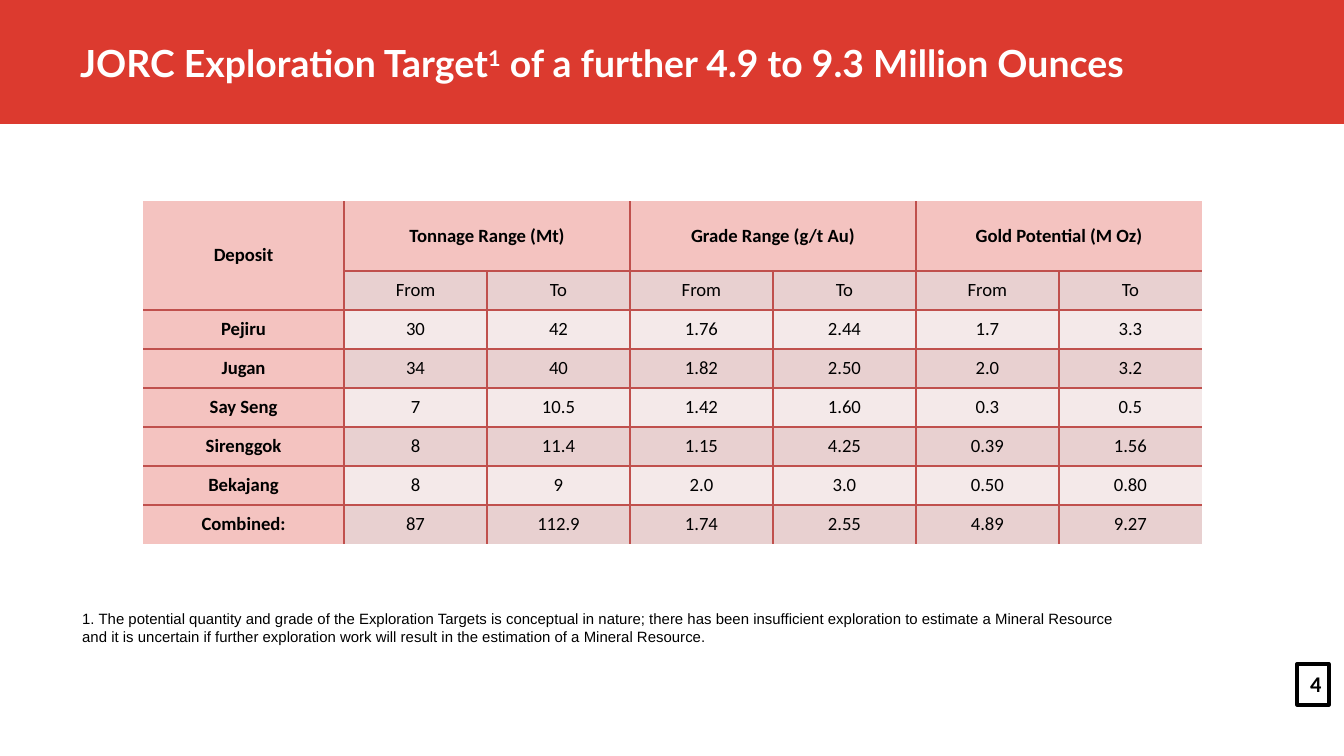
from dataclasses import dataclass

import pptx
import pptx.dml.color
import pptx.enum.shapes
import pptx.enum.text
import pptx.oxml
import pptx.oxml.ns
import pptx.util
from lxml import etree

EMU_PER_PX = 914400 / 134.4
MIDDLE = pptx.enum.text.MSO_ANCHOR.MIDDLE
CENTER = pptx.enum.text.PP_ALIGN.CENTER


@dataclass(frozen=True)
class Theme:
    red: str = "DC3A2F"
    border: str = "C0504D"
    dark_band: str = "E8D0D0"
    light_band: str = "F4E9E9"
    black: str = "000000"
    white: str = "FFFFFF"
    heading_font: str = "Lato"
    table_font: str = "Calibri"
    note_font: str = "Arial"
    heading_size: int = 20
    table_size: int = 10
    note_size: int = 8
    page_size: int = 12


THEME = Theme()

HEADERS = ["Tonnage Range (Mt)", "Grade Range (g/t Au)", "Gold Potential (M Oz)"]
DEPOSITS = [
    ["Pejiru", "30", "42", "1.76", "2.44", "1.7", "3.3"],
    ["Jugan", "34", "40", "1.82", "2.50", "2.0", "3.2"],
    ["Say Seng", "7", "10.5", "1.42", "1.60", "0.3", "0.5"],
    ["Sirenggok", "8", "11.4", "1.15", "4.25", "0.39", "1.56"],
    ["Bekajang", "8", "9", "2.0", "3.0", "0.50", "0.80"],
    ["Combined:", "87", "112.9", "1.74", "2.55", "4.89", "9.27"],
]
FOOTNOTE = (
    "1. The potential quantity and grade of the Exploration Targets is conceptual in nature; "
    "there has been insufficient exploration to estimate a Mineral Resource and it is uncertain "
    "if further exploration work will result in the estimation of a Mineral Resource."
)


def px(n):
    return pptx.util.Emu(round(n * EMU_PER_PX))


def rgb(color):
    return pptx.dml.color.RGBColor.from_string(color)


def add_run(p, text, font, size, color, bold=False):
    r = p.add_run()
    r.text = text
    r.font.name = font
    r.font.size = pptx.util.Pt(size)
    r.font.bold = bold
    r.font.color.rgb = rgb(color)
    return r


def add_rect(s, x, y, w, h, fill=None, line=None):
    sp = s.shapes.add_shape(
        pptx.enum.shapes.MSO_SHAPE.RECTANGLE, px(x), px(y), px(w), px(h))
    sp.shadow.inherit = False
    if fill:
        sp.fill.solid()
        sp.fill.fore_color.rgb = rgb(fill)
    else:
        sp.fill.background()
    if line:
        sp.line.color.rgb = rgb(line)
        sp.line.width = pptx.util.Pt(1.75)
    else:
        sp.line.fill.background()
    return sp


def add_text_box(s, x, y, w, h):
    tf = s.shapes.add_textbox(px(x), px(y), px(w), px(h)).text_frame
    tf.word_wrap = True
    return tf


def add_title(s):
    add_rect(s, 0, 0, 1344, 124, fill=THEME.red)
    tf = add_text_box(s, 67, 0, 1210, 126)
    tf.vertical_anchor = MIDDLE
    p = tf.paragraphs[0]
    style = (THEME.heading_font, THEME.heading_size, THEME.white, True)
    add_run(p, "JORC Exploration Target", *style)
    add_run(p, "1", *style).font._element.set("baseline", "30000")
    add_run(p, " of a further 4.9 to 9.3 Million Ounces", *style)


def merge_group(row, col):
    """Identify the merged block, or single cell, that holds a position."""
    if col == 0:
        return max(row, 1), 0
    if row == 0:
        return 0, (col + 1) // 2
    return row, col


def set_borders(cell, visible):
    tc_pr = cell._tc.get_or_add_tcPr()
    for index, (side, shown) in enumerate(visible.items()):
        ln = etree.Element(pptx.oxml.ns.qn(f"a:ln{side}"), w="12700")
        if shown:
            fill = etree.SubElement(ln, pptx.oxml.ns.qn("a:solidFill"))
            etree.SubElement(fill, pptx.oxml.ns.qn("a:srgbClr"), val=THEME.border)
        else:
            etree.SubElement(ln, pptx.oxml.ns.qn("a:noFill"))
        tc_pr.insert(index, ln)


def fill_cell(cell, color, alpha=None):
    cell.fill.solid()
    cell.fill.fore_color.rgb = rgb(color)
    if alpha:
        clr = cell._tc.tcPr.find(".//" + pptx.oxml.ns.qn("a:srgbClr"))
        etree.SubElement(clr, pptx.oxml.ns.qn("a:alpha"), val=str(alpha * 1000))


def style_cell(cell, row, col, rows, cols):
    if row == 0 or col == 0:
        fill_cell(cell, THEME.red, alpha=30)
    else:
        fill_cell(cell, THEME.dark_band if row % 2 else THEME.light_band)
    neighbours = {"L": (row, col - 1), "R": (row, col + 1),
                  "T": (row - 1, col), "B": (row + 1, col)}
    set_borders(cell, {
        side: 0 <= r < rows and 0 <= c < cols
        and merge_group(r, c) != merge_group(row, col)
        for side, (r, c) in neighbours.items()})
    cell.vertical_anchor = MIDDLE
    cell.margin_left = cell.margin_right = px(9)
    cell.margin_top = cell.margin_bottom = 0


def add_deposit_table(s):
    header = ["Deposit"] + [text for name in HEADERS for text in (name, "")]
    data = [header, [""] + ["From", "To"] * len(HEADERS)] + DEPOSITS
    rows, cols = len(data), len(header)
    widths = [201] + [143] * (cols - 1)
    heights = [70] + [39] * (rows - 1)
    table = s.shapes.add_table(
        rows, cols, px(143), px(201), px(sum(widths)), px(sum(heights))).table
    table.first_row = table.horz_banding = False
    for column, width in zip(table.columns, widths):
        column.width = px(width)
    for table_row, height in zip(table.rows, heights):
        table_row.height = px(height)

    table.cell(0, 0).merge(table.cell(1, 0))
    for col in range(1, cols, 2):
        table.cell(0, col).merge(table.cell(0, col + 1))
    for row, values in enumerate(data):
        for col, value in enumerate(values):
            cell = table.cell(row, col)
            style_cell(cell, row, col, rows, cols)
            if value:
                p = cell.text_frame.paragraphs[0]
                p.alignment = CENTER
                p.space_after = pptx.util.Pt(6)
                add_run(p, value, THEME.table_font, THEME.table_size,
                        THEME.black, row == 0 or col == 0)


def add_footnote(s):
    tf = add_text_box(s, 69, 603, 1068, 50)
    add_run(tf.paragraphs[0], FOOTNOTE, THEME.note_font, THEME.note_size, THEME.black)


def add_page_number(s):
    tf = add_rect(s, 1297, 664, 32, 41, line=THEME.black).text_frame
    tf.word_wrap = True
    tf.vertical_anchor = pptx.enum.text.MSO_ANCHOR.TOP
    p = tf.paragraphs[0]
    p.alignment = pptx.enum.text.PP_ALIGN.LEFT
    add_run(p, "4", THEME.table_font, THEME.page_size, THEME.black, True)


def main():
    prs = pptx.Presentation()
    prs.slide_width, prs.slide_height = px(1344), px(756)
    s = prs.slides.add_slide(prs.slide_layouts[6])
    add_title(s)
    add_deposit_table(s)
    add_footnote(s)
    add_page_number(s)
    prs.save("out.pptx")


if __name__ == "__main__":
    main()
